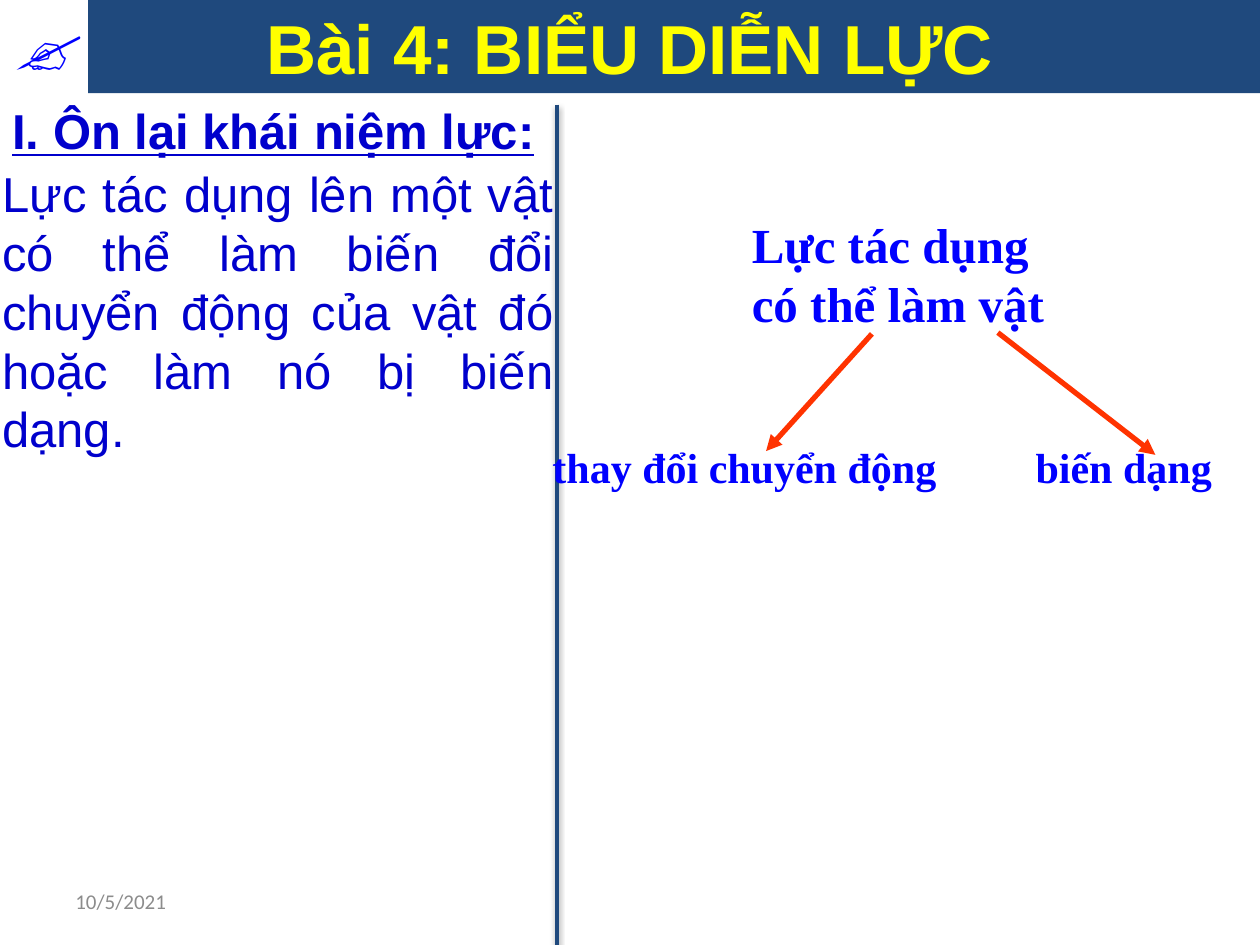
"""Build the physics lesson slide on representing forces."""
from lxml.etree import SubElement as Sub
from pptx import Presentation
from pptx.dml.color import RGBColor as Rgb
from pptx.enum.shapes import MSO_CONNECTOR as Link, MSO_SHAPE as Kind
from pptx.enum.text import MSO_ANCHOR as Anchor, PP_ALIGN as Align
from pptx.oxml.ns import qn
from pptx.util import Inches, Pt

HUES = {"navy": "1F497D", "yellow": "FFFF00", "ink": "0000CC", "blue": "0000FF",
        "red": "FF3300", "white": "FFFFFF", "gray": "8C8C8C", "black": "000000"}


def add_text(lines, area, size, face, hue, bold=False, align=Align.LEFT,
             kind=None, fill=None, anchor=Anchor.MIDDLE, wrap=True):
    area = [Inches(n) for n in area]
    if kind is None:
        box = slide.shapes.add_textbox(*area)
    else:
        box = slide.shapes.add_shape(kind, *area)
        box.shadow.inherit = False
        box.line.fill.background()
        box.fill.background()
    if fill:
        box.fill.solid()
        box.fill.fore_color.rgb = Rgb.from_string(HUES[fill])
    frame = box.text_frame
    frame.word_wrap = wrap
    frame.vertical_anchor = anchor
    frame.text = "\n".join(lines)
    for para in frame.paragraphs:
        para.alignment = align
        font = para.font
        font.size, font.name, font.bold = Pt(size), face, bold
        font.color.rgb = Rgb.from_string(HUES[hue])
    return box


def add_line(start, end, hue, width):
    line = slide.shapes.add_connector(
        Link.STRAIGHT, *[Inches(n) for n in (*start, *end)])
    line.line.color.rgb = Rgb.from_string(HUES[hue])
    line.line.width = Pt(width)
    return line, Sub(line._element.spPr, qn("a:effectLst"))


deck = Presentation()
deck.slide_width, deck.slide_height = Inches(10), Inches(7.5)
slide = deck.slides.add_slide(deck.slide_layouts[6])

add_text(["Bài 4: BIỂU DIỄN LỰC"], (0, 0, 10, 0.74), 39.6, "Arial", "yellow",
         True, Align.CENTER, Kind.RECTANGLE, "navy")

head = add_text(["I. Ôn lại khái niệm lực:"], (0, 0.75, 4.67, 0.58), 28,
                "Arial", "ink", True, anchor=Anchor.TOP)
head.text_frame.paragraphs[0].font.underline = True
body = add_text(["Lực tác dụng lên một vật có thể làm biến đổi chuyển động "
                 "của vật đó hoặc làm nó bị biến dạng."],
                (-0.08, 1.25, 4.57, 2.17), 28, "Arial", "ink",
                align=Align.JUSTIFY, anchor=Anchor.TOP)
for box in (head, body):
    box.text_frame.paragraphs[0].space_before = Pt(5.6)

add_text(["10/5/2021"], (0.5, 6.95, 2.33, 0.4), 12, "Calibri", "gray")

hand = add_text(["✍"], (0.01, 0, 0.67, 0.74), 36, "Calibri", "blue", True,
                Align.CENTER, Kind.RECTANGLE, "white", Anchor.TOP)
hand.text_frame.paragraphs[0].font.italic = True
hand.line.color.rgb = Rgb.from_string(HUES["white"])
hand.line.width = Pt(3)

rule, effects = add_line((4.42, 0.83), (4.42, 7.5), "navy", 2)
shade = Sub(effects, qn("a:outerShdw"), blurRad=str(Pt(3.1)),
            dist=str(Pt(1.6)), dir="5400000", rotWithShape="0")
tint = Sub(shade, qn("a:srgbClr"), val=HUES["black"])
Sub(tint, qn("a:alpha"), val="38000")

for lines, area, size, align, fill in (
        (["Lực tác dụng", "có thể làm vật "], (5.82, 1.67, 2.35, 1), 28,
         Align.JUSTIFY, "white"),
        (["biến dạng "], (7.92, 3.33, 2.08, 0.75), 24, Align.CENTER, "white"),
        (["thay đổi chuyển động "], (4.25, 3.33, 3.25, 0.75), 24,
         Align.JUSTIFY, None)):
    add_text(lines, area, size, "Times New Roman", "blue", True, align,
             Kind.FLOWCHART_ALTERNATE_PROCESS, fill, wrap=False)

for start, end in (((6.92, 2.65), (6.08, 3.58)), ((7.92, 2.64), (9.17, 3.61))):
    arrow, effects = add_line(start, end, "red", 3)
    Sub(arrow.line._get_or_add_ln(), qn("a:tailEnd"), type="triangle")

deck.save("out.pptx")
